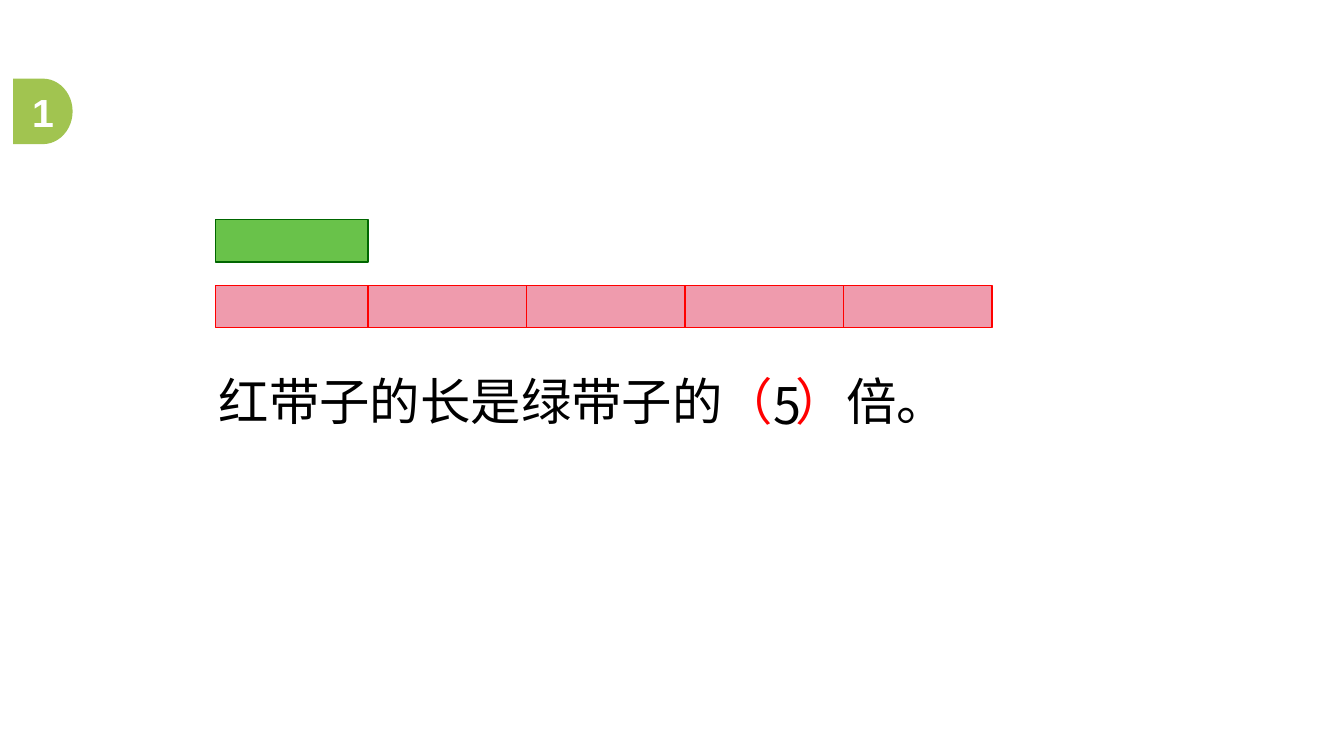
from pptx import Presentation
from pptx.dml.color import RGBColor
from pptx.enum.shapes import MSO_SHAPE as SHAPE
from pptx.enum.text import MSO_ANCHOR as ANCHOR, MSO_AUTO_SIZE as AUTO, PP_ALIGN as ALIGN
from pptx.util import Inches, Pt

CJK = "Noto Sans CJK SC"


def rgb(value):
    return RGBColor.from_string(value)


def add_filled(slide, kind, box, fill, line=None):
    s = slide.shapes.add_shape(kind, *map(Inches, box))
    s.shadow.inherit = False
    s.fill.solid()
    s.fill.fore_color.rgb = rgb(fill)
    if line:
        s.line.color.rgb = rgb(line)
        s.line.width = Pt(1)
    else:
        s.line.fill.background()
    return s


def add_run(p, text, size, color, font, bold=False):
    r = p.add_run()
    r.text = text
    r.font.size = Pt(size)
    r.font.bold = bold
    r.font.name = font
    r.font.color.rgb = rgb(color)
    if font == CJK:
        r.font.language_id = None
        ea = r.font._element.makeelement(
            "{http://schemas.openxmlformats.org/drawingml/2006/main}ea", {"typeface": font})
        r.font._element.append(ea)


def add_line_of_text(slide, box, parts, align=ALIGN.LEFT):
    """Place one paragraph made of (text, color) parts."""
    tf = slide.shapes.add_textbox(*map(Inches, box)).text_frame
    tf.word_wrap = True
    tf.auto_size = AUTO.SHAPE_TO_FIT_TEXT
    p = tf.paragraphs[0]
    p.alignment = align
    for text, color in parts:
        add_run(p, text, 36, color, CJK)


def add_badge(slide, box, number):
    s = add_filled(slide, SHAPE.FLOWCHART_DELAY, box, "A1C450")
    tf = s.text_frame
    tf.margin_left = Inches(0.09)
    tf.margin_right = tf.margin_top = tf.margin_bottom = 0
    tf.vertical_anchor = ANCHOR.MIDDLE
    p = tf.paragraphs[0]
    p.alignment = ALIGN.CENTER
    add_run(p, number, 28, "FFFFFF", "Arial", bold=True)


def add_ribbons(slide, left, top, unit, height):
    """Draw the green ribbon above the red one of five overlapping pieces."""
    add_filled(slide, SHAPE.RECTANGLE, (left, top, unit, height), "69C24A", "006600")
    step, piece, last_piece = 1.573, 2, 1.47
    starts = [left] + [left + unit + i * step for i in range(4)]
    for i, start in enumerate(starts):
        width = last_piece if i == len(starts) - 1 else piece
        add_filled(slide, SHAPE.RECTANGLE, (start, top + 0.65, width, height),
                   "EF9BAD", "FF0000")


def add_sentence(slide, left, top, width, height):
    """Write the sentence with its blank, and the answer over the blank."""
    add_line_of_text(slide, (left, top, width, height), [
        ("红带子的长是绿带子的", "000000"), ("（  ）", "FF0000"), ("倍。", "000000")])
    add_line_of_text(slide, (left + 5.28, top + 0.04, 0.92, height),
                     [("5", "000000")], ALIGN.CENTER)


def main():
    prs = Presentation()
    prs.slide_width, prs.slide_height = Inches(13.33), Inches(7.5)
    slide = prs.slides.add_slide(prs.slide_layouts[6])
    add_ribbons(slide, 2.14, 2.18, 1.51, 0.42)
    add_sentence(slide, 2.07, 3.62, 8.41, 0.71)
    add_badge(slide, (0.13, 0.78, 0.59, 0.65), "1")
    prs.save("out.pptx")


if __name__ == "__main__":
    main()
